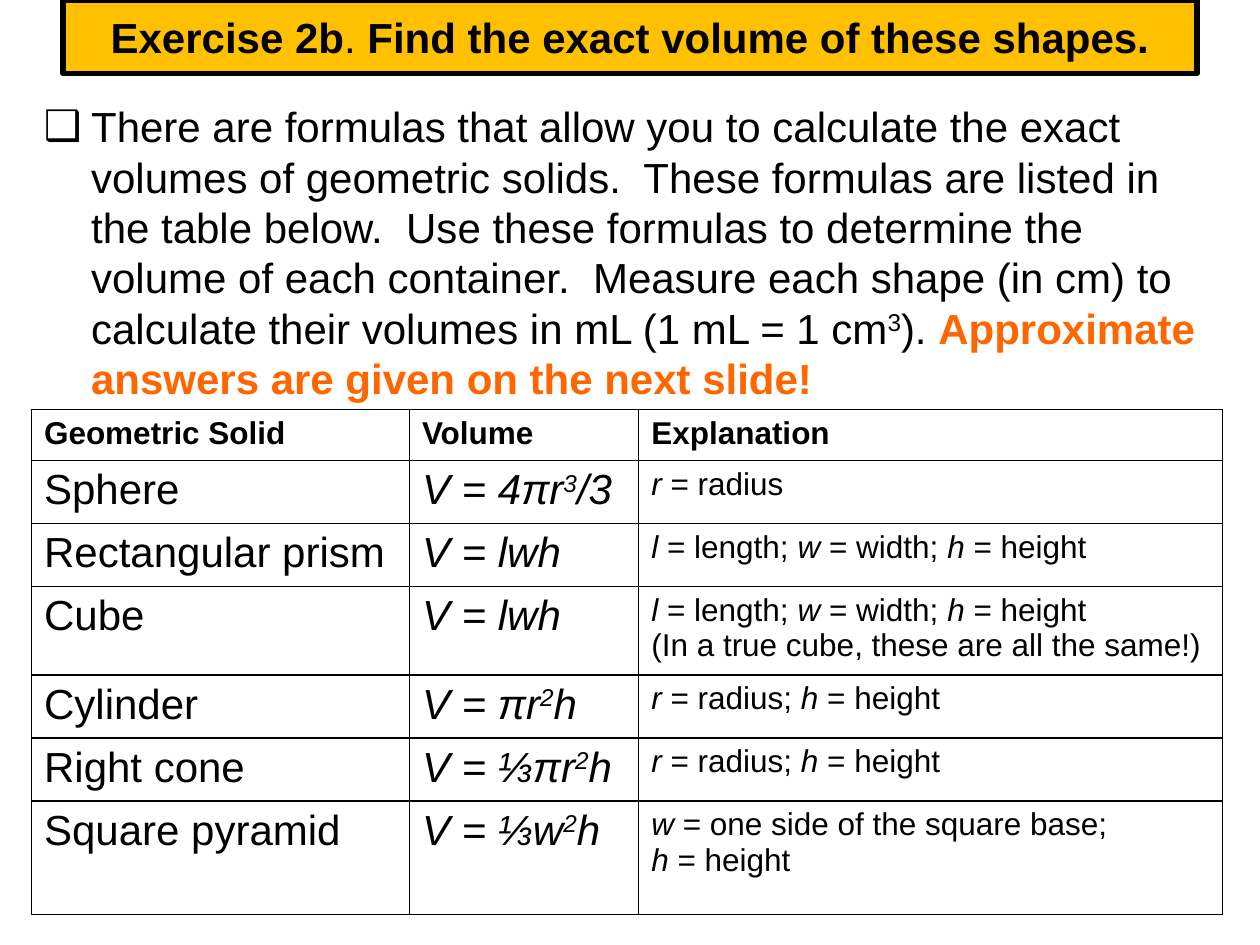
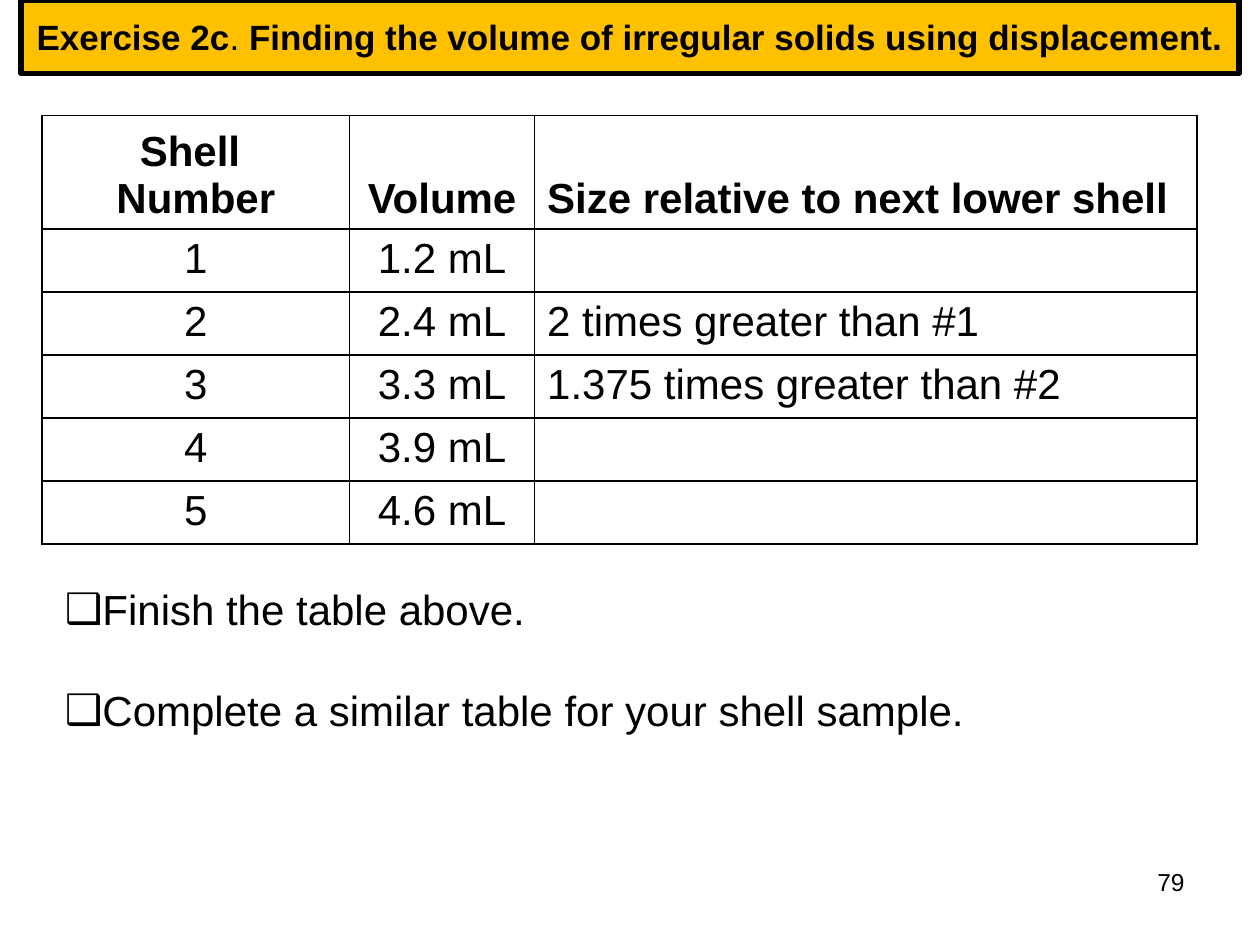
from lxml import etree
from pptx import Presentation
from pptx.dml.color import RGBColor
from pptx.enum.shapes import MSO_SHAPE
from pptx.enum.text import MSO_ANCHOR, PP_ALIGN
from pptx.oxml.ns import qn
from pptx.util import Pt

RECT = MSO_SHAPE.RECTANGLE
LEFT, CENTER, RIGHT = PP_ALIGN.LEFT, PP_ALIGN.CENTER, PP_ALIGN.RIGHT
TOP, MIDDLE, BOTTOM = MSO_ANCHOR.TOP, MSO_ANCHOR.MIDDLE, MSO_ANCHOR.BOTTOM

BLACK = RGBColor(0x00, 0x00, 0x00)
WHITE = RGBColor(0xFF, 0xFF, 0xFF)
GOLD = RGBColor(0xFF, 0xC0, 0x00)
ORANGE = RGBColor(0xFF, 0x66, 0x00)
FONT = "Arial"
BULLET = "❑"
BODY_LEADING = 28.8
SLIDE_W, SLIDE_H = 720, 540
TITLE_H = 42

MARKS = {"*": "bold", "_": "italic", "^": "superscript", "~": "accent"}

FORMULAS = [
    ["*Geometric Solid*", "*Volume*", "*Explanation*"],
    ["Sphere", "_V = 4πr^3^/3_", "_r_ = radius"],
    ["Rectangular prism", "_V = lwh_", "_l_ = length; _w_ = width; _h_ = height"],
    ["Cube", "_V = lwh_",
     "_l_ = length; _w_ = width; _h_ = height\n(In a true cube, these are all the same!)"],
    ["Cylinder", "_V = πr^2^h_", "_r_ = radius; _h_ = height"],
    ["Right cone", "_V = ⅓πr^2^h_", "_r_ = radius; _h_ = height"],
    ["Square pyramid", "_V = ⅓w^2^h_", "_w_ = one side of the square base;\n_h_ = height"],
]

SHELLS = [
    ["*Shell *\n*Number*", "*Volume*", "*Size relative to next lower shell*"],
    ["1", "1.2 mL", ""],
    ["2", "2.4 mL", "2 times greater than #1"],
    ["3", "3.3 mL", "1.375 times greater than #2"],
    ["4", "3.9 mL", ""],
    ["5", "4.6 mL", ""],
]

INTRO = ("There are formulas that allow you to calculate the exact volumes of geometric solids.  "
         "These formulas are listed in the table below.  Use these formulas to determine the "
         "volume of each container.  Measure each shape (in cm) to calculate their volumes in mL "
         "(1 mL = 1 cm^3^). ~Approximate answers are given on the next slide!~")


def set_attrs(obj, values):
    """Set every attribute named in a dict of format values."""
    for name, value in values.items():
        setattr(obj, name, value)


def split_marks(text):
    """Yield (text, active styles) pieces of text with toggling marks."""
    piece, active = "", set()
    for char in text:
        if char in MARKS:
            if piece:
                yield piece, set(active)
            piece = ""
            active ^= {MARKS[char]}
        else:
            piece += char
    if piece:
        yield piece, active


def add_runs(p, text, size):
    """Fill a paragraph with the styled runs of marked text."""
    for piece, styles in split_marks(text):
        r = p.add_run()
        r.text = piece
        set_attrs(r.font, {
            "name": FONT,
            "size": Pt(size),
            "bold": bool(styles & {"bold", "accent"}),
            "italic": "italic" in styles,
        })
        r.font.color.rgb = ORANGE if "accent" in styles else BLACK
        if "superscript" in styles:
            r.font._element.set("baseline", "30000")


def fill_text(tf, text, size, align=LEFT):
    """Write one paragraph for each line of text."""
    for i, line in enumerate(text.split("\n")):
        p = tf.add_paragraph() if i else tf.paragraphs[0]
        p.alignment = align
        add_runs(p, line, size)


def add_title(s, text, width, size):
    """Add the gold title band, centred at the top of the slide."""
    sp = s.shapes.add_shape(RECT, Pt((SLIDE_W - width) / 2), 0, Pt(width), Pt(TITLE_H))
    sp.shadow.inherit = False
    sp.fill.solid()
    sp.fill.fore_color.rgb = GOLD
    sp.line.color.rgb = BLACK
    sp.line.width = Pt(3)
    set_attrs(sp.text_frame, {
        "word_wrap": True, "vertical_anchor": MIDDLE,
        "margin_left": Pt(3.6), "margin_right": Pt(3.6),
    })
    fill_text(sp.text_frame, text, size, CENTER)


def add_text(s, text, box, size, align=LEFT):
    """Add a wrapping text box and return its text frame."""
    tf = s.shapes.add_textbox(*map(Pt, box)).text_frame
    tf.word_wrap = True
    fill_text(tf, text, size, align)
    return tf


def add_bullets(s, text, box, indent=0, gap=0):
    """Add a text box whose paragraphs have box bullets."""
    for i, p in enumerate(add_text(s, text, box, 24).paragraphs):
        set_attrs(p, {"line_spacing": Pt(BODY_LEADING), "space_before": Pt(gap if i else 0)})
        pPr = p._p.get_or_add_pPr()
        pPr.set("marL", str(Pt(indent)))
        pPr.set("indent", str(-Pt(indent)))
        etree.SubElement(pPr, qn("a:buFont")).set("typeface", FONT)
        etree.SubElement(pPr, qn("a:buChar")).set("char", BULLET)


def add_borders(cell):
    """Draw a thin black line on all four sides of a cell."""
    tcPr = cell._tc.get_or_add_tcPr()
    for i, side in enumerate(("lnL", "lnR", "lnT", "lnB")):
        ln = etree.Element(qn(f"a:{side}"), w=str(Pt(1)))
        fill = etree.SubElement(ln, qn("a:solidFill"))
        etree.SubElement(fill, qn("a:srgbClr")).set("val", str(BLACK))
        tcPr.insert(i, ln)


def add_grid(s, rows, origin, widths, heights, sizes, header_size, aligns, header_anchor=TOP):
    """Add a plain ruled table with a format for each column."""
    box = (*origin, sum(widths), sum(heights))
    table = s.shapes.add_table(len(rows), len(widths), *map(Pt, box)).table
    set_attrs(table, {"first_row": False, "horz_banding": False})
    for column, width in zip(table.columns, widths):
        column.width = Pt(width)
    for i, (row, height) in enumerate(zip(rows, heights)):
        table.rows[i].height = Pt(height)
        for j, text in enumerate(row):
            cell = table.cell(i, j)
            cell.fill.solid()
            cell.fill.fore_color.rgb = WHITE
            cell.vertical_anchor = TOP if i else header_anchor
            fill_text(cell.text_frame, text, sizes[j] if i else header_size, aligns[j])
            add_borders(cell)


def add_formula_slide(prs):
    """Build the slide of volume formulas."""
    s = prs.slides.add_slide(prs.slide_layouts[6])
    add_title(s, "*Exercise 2b*. *Find the exact volume of these shapes.*", 648, 24)
    add_bullets(s, INTRO, (18, 54, 684, 426), indent=27)
    add_grid(s, FORMULAS, (18, 234), (216, 131, 333.5),
             (29.2, 36, 36, 50.4, 36, 36, 64.8), (24, 24, 18), 18, (LEFT,) * 3)


def add_shell_slide(prs):
    """Build the slide of shell volumes."""
    s = prs.slides.add_slide(prs.slide_layouts[6])
    add_text(s, "79", (516, 492, 168, 37.5), 14, RIGHT)
    add_title(s, "*Exercise 2c*. *Finding the volume of irregular solids using displacement.*",
              696, 20)
    add_grid(s, SHELLS, (24, 66), (175.75, 105.75, 378.5), (64.8,) + (36,) * 5,
             (24,) * 3, 24, (CENTER, CENTER, LEFT), BOTTOM)
    add_bullets(s, "Finish the table above.\nComplete a similar table for your shell sample.",
                (30, 330, 672, 116.5), gap=BODY_LEADING)


def main():
    """Build and save the presentation."""
    prs = Presentation()
    set_attrs(prs, {"slide_width": Pt(SLIDE_W), "slide_height": Pt(SLIDE_H)})
    add_formula_slide(prs)
    add_shell_slide(prs)
    prs.save("out.pptx")


if __name__ == "__main__":
    main()
